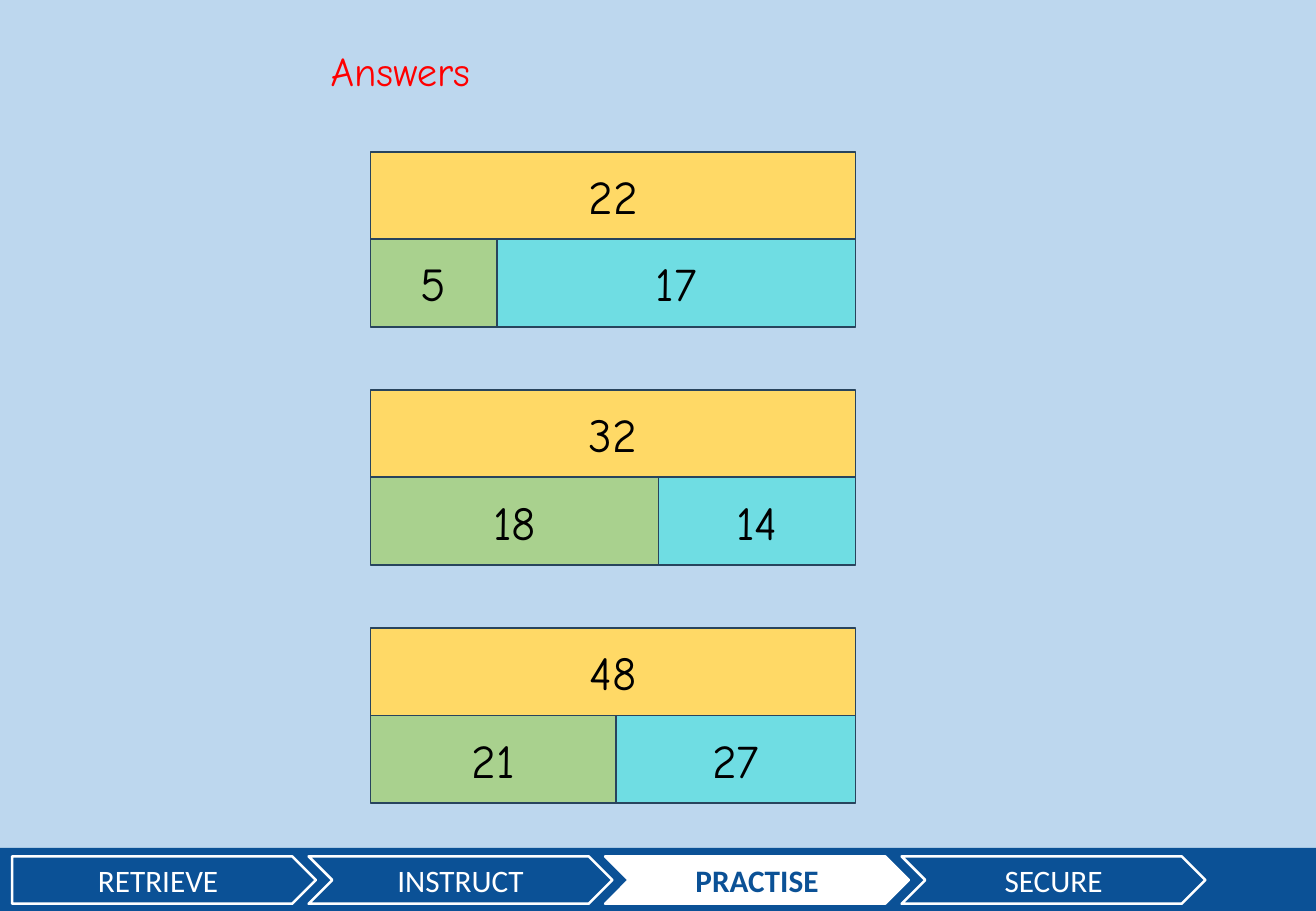
from pptx import Presentation
from pptx.dml.color import RGBColor as RGB
from pptx.enum.shapes import MSO_SHAPE as SHAPE
from pptx.enum.text import MSO_ANCHOR as ANCHOR, MSO_AUTO_SIZE as FIT, PP_ALIGN as ALIGN
from pptx.util import Inches, Pt

SKY = RGB(0xBD, 0xD7, 0xEE)
NAVY = RGB(0x0B, 0x51, 0x96)
WHITE = RGB(0xFF, 0xFF, 0xFF)
BLACK = RGB(0x00, 0x00, 0x00)
RED = RGB(0xFF, 0x00, 0x00)
GOLD = RGB(0xFF, 0xD9, 0x66)
GREEN = RGB(0xA9, 0xD1, 0x8E)
AQUA = RGB(0x6F, 0xDD, 0xE3)
EDGE = RGB(0x28, 0x44, 0x5D)

HAND = "Comic Neue"
SANS = "Calibri"
LEFT, WIDTH, HEIGHT = 3.05, 3.99, 0.72
MODELS = [
    (1.25, 22, 5, 17, 1.04),
    (3.21, 32, 18, 14, 2.37),
    (5.17, 48, 21, 27, 2.02),
]
STEPS = ["RETRIEVE", "INSTRUCT", "PRACTISE", "SECURE"]
ACTIVE = "PRACTISE"


def style(para, font, size, color, align, bold=False):
    """Format a paragraph and its runs."""
    para.alignment = align
    for run in para.runs:
        run.font.name = font
        run.font.size = Pt(size)
        run.font.bold = bold
        run.font.color.rgb = color


def add_block(slide, kind, box, fill, edge=None, weight=1):
    """Add a flat filled shape, outlined when an edge colour is given."""
    shape = slide.shapes.add_shape(kind, *map(Inches, box))
    shape.shadow.inherit = False
    shape.fill.solid()
    shape.fill.fore_color.rgb = fill
    if edge is None:
        shape.line.fill.background()
    else:
        shape.line.color.rgb = edge
        shape.line.width = Pt(weight)
    return shape


def add_label(shape, text, font, size, color, bold=False):
    """Write centred text in a shape."""
    frame = shape.text_frame
    frame.text = text
    frame.vertical_anchor = ANCHOR.MIDDLE
    style(frame.paragraphs[0], font, size, color, ALIGN.CENTER, bold)


def add_model(slide, top, whole, first, second, split):
    """Add a bar model: a whole above its two parts."""
    low = top + HEIGHT
    bars = [
        (whole, LEFT, top, WIDTH, GOLD),
        (first, LEFT, low, split, GREEN),
        (second, LEFT + split, low, WIDTH - split, AQUA),
    ]
    for value, left, y, width, fill in bars:
        bar = add_block(slide, SHAPE.RECTANGLE, (left, y, width, HEIGHT), fill, EDGE)
        add_label(bar, str(value), HAND, 28, BLACK)


def add_steps(slide):
    """Add the bottom band with the lesson steps."""
    add_block(slide, SHAPE.RECTANGLE, (0, 6.98, 10.83, 0.52), NAVY)
    for index, step in enumerate(STEPS):
        kind = SHAPE.CHEVRON if index else SHAPE.PENTAGON
        on = step == ACTIVE
        box = (0.1 + 2.44 * index, 7.05, 2.5, 0.39)
        arrow = add_block(slide, kind, box, WHITE if on else NAVY, WHITE, 1.5)
        add_label(arrow, step, SANS, 18.5, NAVY if on else WHITE, on)


def set_title(slide, text):
    """Place and format the slide title."""
    title = slide.shapes.title
    title.left, title.top = Inches(2.62), Inches(0.33)
    title.width, title.height = Inches(1.53), Inches(0.5)
    frame = title.text_frame
    frame.text = text
    frame.auto_size = FIT.NONE
    frame.vertical_anchor = ANCHOR.TOP
    style(frame.paragraphs[0], HAND, 24, RED, ALIGN.LEFT)


def main():
    """Build and save the slide."""
    deck = Presentation()
    deck.slide_width, deck.slide_height = Inches(10.83), Inches(7.5)
    slide = deck.slides.add_slide(deck.slide_layouts[5])
    slide.background.fill.solid()
    slide.background.fill.fore_color.rgb = SKY
    add_steps(slide)
    set_title(slide, "Answers")
    for model in MODELS:
        add_model(slide, *model)
    deck.save("out.pptx")


if __name__ == "__main__":
    main()
